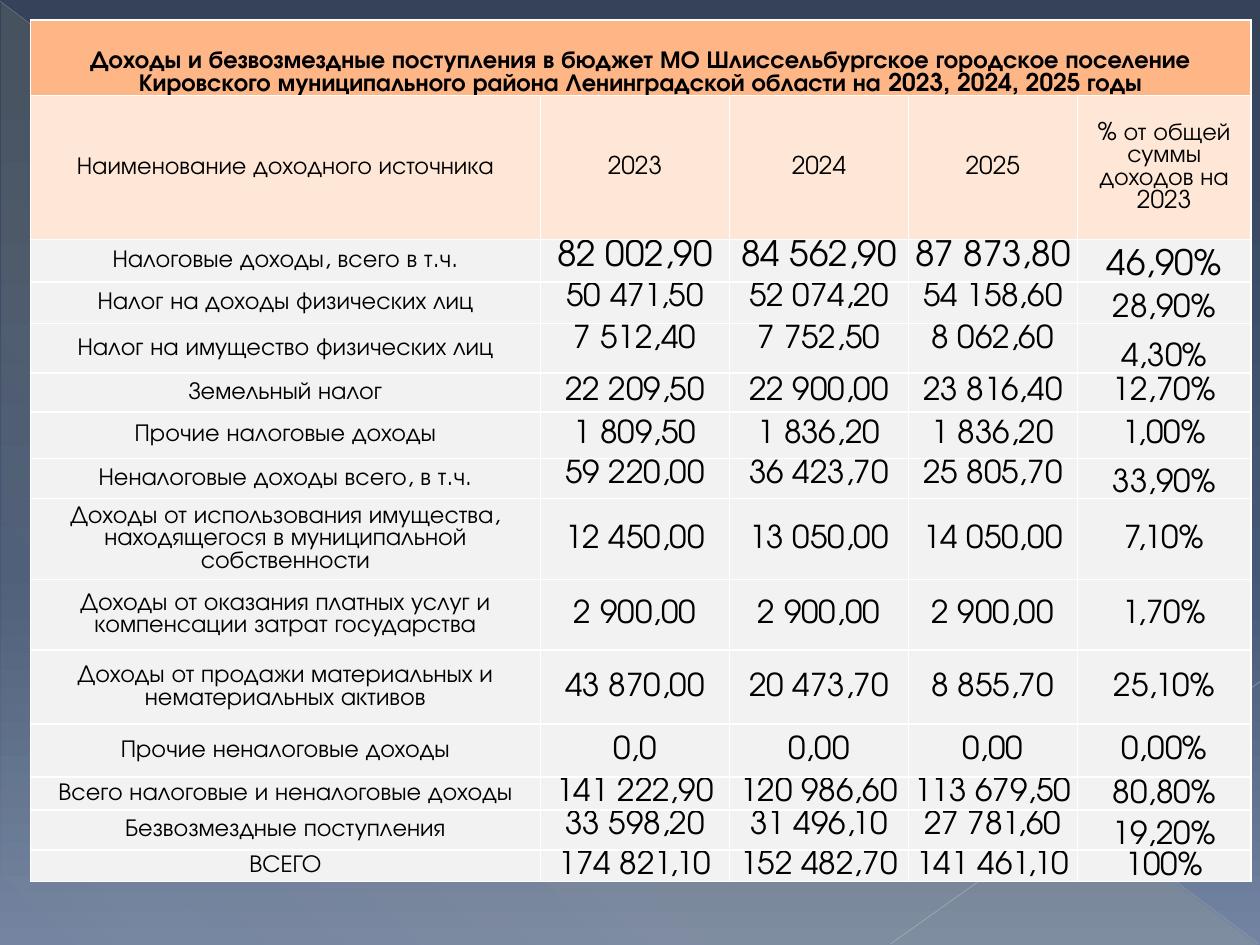
from lxml import etree
from pptx import Presentation
from pptx import util as u
from pptx.dml import color
from pptx.enum import shapes, text
from pptx.oxml import ns, xmlchemy

FONT = "TeX Gyre Adventor"
HEX = {
    "title": "FEB687", "head": "FFE7D7", "body": "F2F2F2",
    "text": "000000", "edge": "FFFFFF",
    "dark": "35425A", "mid": "465877", "light": "7383A2",
    "glow": "FFF39D", "long": "BABDC4", "short": "C1C4CA",
}
COLS = [4.05, 1.5, 1.42, 1.34, 1.38]
HEAD = 0.6, 1.14
TITLE = ("Доходы и безвозмездные поступления в бюджет МО Шлиссельбургское "
         "городское поселение Кировского муниципального района "
         "Ленинградской области на 2023, 2024, 2025 годы")
NAMES = ["Наименование доходного источника", "2023", "2024", "2025",
         "% от общей суммы доходов на 2023"]
MID = text.MSO_ANCHOR.MIDDLE
TOP = text.MSO_ANCHOR.TOP
LOW = text.MSO_ANCHOR.BOTTOM
WIDE = {"margin_left": 0.07, "margin_right": 0.07,
        "margin_top": 0, "margin_bottom": 0}
SLIM = {"margin_left": 0.01, "margin_right": 0.01,
        "margin_top": 0.01, "margin_bottom": 0}
KINDS = {"split": (SLIM, TOP, LOW), "wide": (WIDE, MID, MID),
         "slim": (SLIM, MID, MID)}
ROWS = [
    (0.34, "split", "Налоговые доходы, всего в т.ч.",
     "82 002,90", "84 562,90", "87 873,80", "46,90%"),
    (0.33, "split", "Налог на доходы физических лиц",
     "50 471,50", "52 074,20", "54 158,60", "28,90%"),
    (0.39, "split", "Налог на имущество физических лиц",
     "7 512,40", "7 752,50", "8 062,60", "4,30%"),
    (0.31, "wide", "Земельный налог",
     "22 209,50", "22 900,00", "23 816,40", "12,70%"),
    (0.37, "wide", "Прочие налоговые доходы",
     "1 809,50", "1 836,20", "1 836,20", "1,00%"),
    (0.32, "split", "Неналоговые доходы всего, в т.ч.",
     "59 220,00", "36 423,70", "25 805,70", "33,90%"),
    (0.64, "slim", "Доходы от использования имущества, "
     "находящегося в муниципальной собственности",
     "12 450,00", "13 050,00", "14 050,00", "7,10%"),
    (0.56, "slim", "Доходы от оказания платных услуг и "
     "компенсации затрат государства",
     "2 900,00", "2 900,00", "2 900,00", "1,70%"),
    (0.59, "slim", "Доходы от продажи материальных и "
     "нематериальных активов",
     "43 870,00", "20 473,70", "8 855,70", "25,10%"),
    (0.42, "slim", "Прочие неналоговые доходы",
     "0,0", "0,00", "0,00", "0,00%"),
    (0.26, "split", "Всего налоговые и неналоговые доходы",
     "141 222,90", "120 986,60", "113 679,50", "80,80%"),
    (0.32, "split", "Безвозмездные поступления",
     "33 598,20", "31 496,10", "27 781,60", "19,20%"),
    (0.25, "split", "ВСЕГО",
     "174 821,10", "152 482,70", "141 461,10", "100%"),
]


def rgb(name):
    return color.RGBColor.from_string(HEX[name])


def add_node(root, tag, **attrs):
    node = etree.SubElement(root, ns.qn(tag))
    for key, val in attrs.items():
        node.set(key, str(val))
    return node


def add_tint(root, name, alpha):
    tint = add_node(root, "a:srgbClr", val=HEX[name])
    if alpha < 100:
        add_node(tint, "a:alpha", val=alpha * 1000)


def set_blend(fill, stops, angle):
    fill.gradient()
    grad = fill._fill._gradFill
    for node in list(grad):
        grad.remove(node)
    group = add_node(grad, "a:gsLst")
    for pos, name, alpha in stops:
        add_tint(add_node(group, "a:gs", pos=pos * 1000), name, alpha)
    add_node(grad, "a:lin", ang=angle * 60000, scaled=0)


def add_glow(slide):
    box = [u.Inches(n) for n in (0.01, 0.02, 9.98, 7.48)]
    glow = slide.shapes.add_shape(shapes.MSO_SHAPE.RIGHT_TRIANGLE, *box)
    glow.shadow.inherit = False
    glow.line.fill.background()
    set_blend(glow.fill, [(0, "glow", 10), (70, "glow", 8),
                          (100, "glow", 1)], 133)


def add_line(slide, ends, name, width, alpha):
    line = slide.shapes.add_connector(
        shapes.MSO_CONNECTOR.STRAIGHT, *[u.Inches(n) for n in ends])
    line.line.width = u.Pt(width)
    line.line.color.rgb = rgb(name)
    tint = line.line._ln.find(".//" + ns.qn("a:srgbClr"))
    add_node(tint, "a:alpha", val=alpha * 1000)
    add_node(line._element.spPr, "a:effectLst")


def set_edges(cell):
    props = cell._tc.get_or_add_tcPr()
    for spot, side in enumerate(("a:lnL", "a:lnR", "a:lnT", "a:lnB")):
        edge = add_node(props, side, w=u.Pt(1))
        add_tint(add_node(edge, "a:solidFill"), "edge", 100)
        props.insert(spot, edge)


def set_cell(cell, words, fill, size=14, pad=WIDE, anchor=MID, bold=False):
    cell.fill.solid()
    cell.fill.fore_color.rgb = rgb(fill)
    set_edges(cell)
    for key, val in pad.items():
        setattr(cell, key, u.Inches(val))
    cell.vertical_anchor = anchor
    para = cell.text_frame.paragraphs[0]
    para.alignment = text.PP_ALIGN.CENTER
    run = para.add_run()
    run.text = words
    for key, val in {"name": FONT, "size": u.Pt(size), "bold": bold}.items():
        setattr(run.font, key, val)
    run.font.color.rgb = rgb("text")


def add_grid(slide):
    highs = [*HEAD, *[row[0] for row in ROWS]]
    box = [u.Inches(n) for n in (0.24, 0.16, sum(COLS), sum(highs))]
    grid = slide.shapes.add_table(len(highs), len(COLS), *box).table
    for col, wide in zip(grid.columns, COLS):
        col.width = u.Inches(wide)
    for row, high in zip(grid.rows, highs):
        row.height = u.Inches(high)
    return grid


def fill_grid(grid):
    grid.cell(0, 0).merge(grid.cell(0, len(COLS) - 1))
    set_cell(grid.cell(0, 0), TITLE, "title", anchor=LOW, bold=True)
    for col, name in enumerate(NAMES):
        set_cell(grid.cell(1, col), name, "head")
    for row, (_, kind, name, *sums) in enumerate(ROWS, 2):
        pad, mid, last = KINDS[kind]
        size = 20 if row == 2 else 18
        set_cell(grid.cell(row, 0), name, "body")
        for col, val in enumerate(sums, 1):
            anchor = last if col == len(sums) else mid
            set_cell(grid.cell(row, col), val, "body", size, pad, anchor)


def main():
    deck = Presentation()
    deck.slide_width, deck.slide_height = u.Inches(10), u.Inches(7.5)
    slide = deck.slides.add_slide(deck.slide_layouts[6])
    set_blend(slide.background.fill, [(0, "dark", 100), (60, "mid", 100),
                                      (100, "light", 100)], 90)
    add_glow(slide)
    add_line(slide, (0, 0.01, 9.99, 7.49), "long", 0.39, 35)
    add_line(slide, (10, 5.41, 7.07, 7.49), "short", 0.47, 45)
    fill_grid(add_grid(slide))
    deck.save("out.pptx")


if __name__ == "__main__":
    main()
